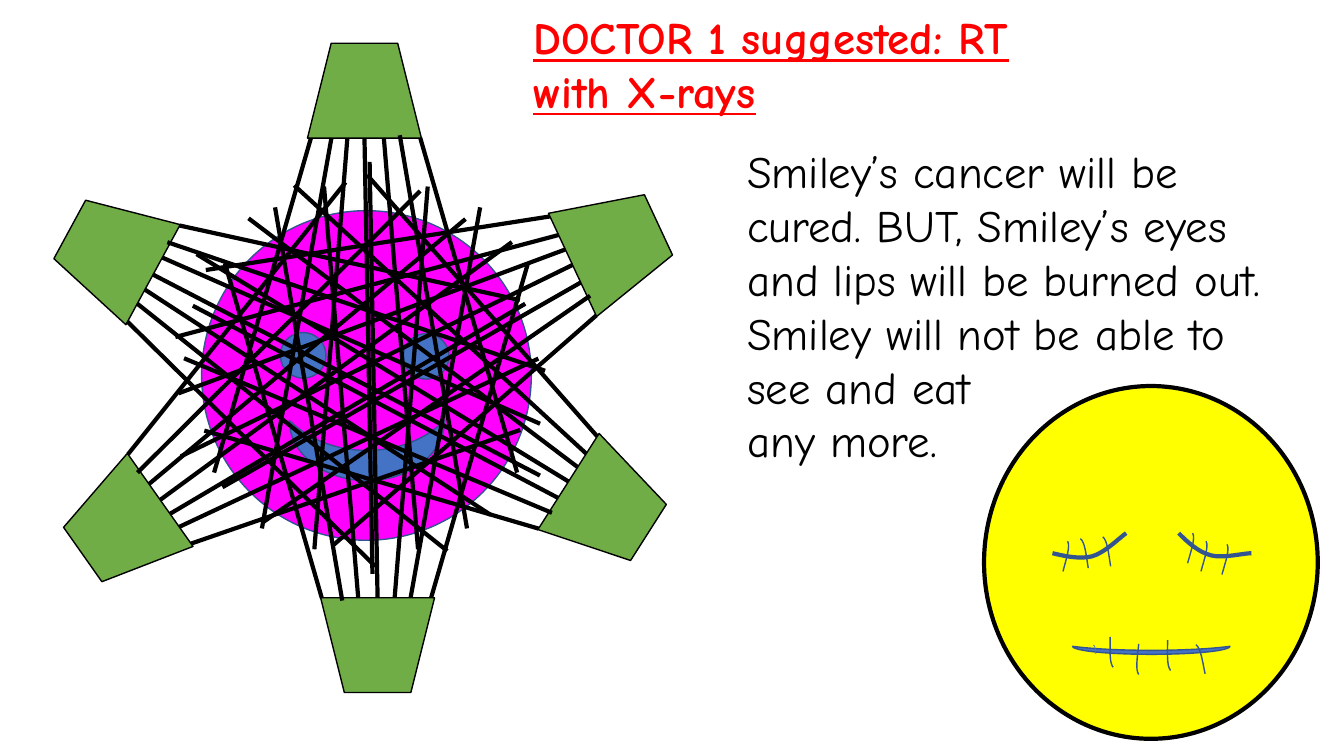
from math import cos, radians, sin
from lxml.etree import SubElement
from pptx import Presentation
from pptx.dml.color import RGBColor
from pptx.enum.shapes import MSO_CONNECTOR, MSO_SHAPE
from pptx.enum.text import MSO_ANCHOR, MSO_AUTO_SIZE, PP_ALIGN
from pptx.oxml.ns import qn
from pptx.util import Inches, Pt

COLORS = {
    "skin": "FF00FF", "blue": "4472C4", "edge": "325491", "green": "70AD47",
    "black": "000000", "yellow": "FFFF00", "red": "FF0000",
}
FONT = "Comic Neue"
SOURCES = [
    (0.54, 2.03, 298.5), (3.05, 0.43, 0), (0.64, 4.76, 234.8),
    (5.47, 4.56, 122.5), (5.54, 1.96, 65), (3.18, 5.93, 180),
]
BEAMS = [
    ((-0.29, 0.5), (-0.9, 4.62)), ((0.31, 0.47), (0.9, 4.62)),
    ((0, 0.5), (0.07, 5.1)), ((0.17, 0.5), (0.47, 4.84)),
    ((-0.15, 0.5), (-0.44, 4.84)), ((-0.47, 0.5), (-1.32, 4.03)),
    ((0.49, 0.5), (1.34, 4.03)),
]
BROWS = [
    [(20.5, 47.4), (24.5, 48.3), (28.7, 49.1), (32.3, 48.3),
     (36, 47.4), (40.5, 43.1), (42.6, 41.7)],
    [(58.3, 41.7), (61.3, 44.6), (64.4, 47.1), (68, 48),
     (71.6, 48.9), (77.6, 47.4), (80.1, 47.4)],
]
STITCH = [(0, 0), (0, 3.7), (-0.3, 7.4), (0.9, 8.6)]
STITCHES = [
    (37.8, 71.1, 0), (55, 72, 0), (64.7, 73.1, 168.2), (45.9, 73.1, 5.7),
    (71.9, 44.9, 195.3), (65.6, 44, 195.3), (61.6, 41.7, 195.3),
    (36.6, 42.6, 170.8), (29.9, 43.1, 170.8), (24.2, 44, 194.4),
]


def color(name):
    return RGBColor.from_string(COLORS[name])


def style(shape, fill, line, width):
    shape.shadow.inherit = False
    if fill:
        shape.fill.solid()
        shape.fill.fore_color.rgb = color(fill)
    else:
        shape.fill.background()
    shape.line.color.rgb = color(line)
    shape.line.width = Pt(width)


def place(box, col, row):
    left, top, width, height = box
    return Inches(left + width * col / 100), Inches(top + height * row / 100)


def draw(shapes, kind, box, cell, fill, line="edge", width=1, turn=0):
    col, row, cols, rows = cell
    size = Inches(box[2] * cols / 100), Inches(box[3] * rows / 100)
    shape = shapes.add_shape(kind, *place(box, col, row), *size)
    shape.rotation = turn
    style(shape, fill, line, width)


def curve(shapes, box, nodes, width, turn=0):
    dots = [place(box, *node) for node in nodes]
    pen = shapes.build_freeform(*dots[0])
    pen.add_line_segments(dots[1:], close=False)
    shape = pen.convert_to_shape()
    lines = list(shape._element.iter(qn("a:lnTo")))
    track = lines[0].getparent()
    for i in range(0, len(lines), 3):
        arc = SubElement(track, qn("a:cubicBezTo"))
        for line in lines[i:i + 3]:
            arc.append(line[0])
            track.remove(line)
    shape.rotation = turn
    style(shape, None, "edge", width)


def patient(slide, box):
    shapes = slide.shapes.add_group_shape().shapes
    draw(shapes, MSO_SHAPE.OVAL, box, (0, 0, 100, 100), "skin")
    draw(shapes, MSO_SHAPE.MOON, box, (41, 49.2, 18.3, 47.1), "blue", turn=270)
    for col, row in ((23.9, 37), (61.2, 37.3)):
        draw(shapes, MSO_SHAPE.OVAL, box, (col, row, 13.8, 13.8), "blue")


def source(slide, box, turn):
    shapes = slide.shapes.add_group_shape().shapes
    draw(shapes, MSO_SHAPE.TRAPEZOID, box, (0, 0, 100, 100), "green", "black", 1, turn)
    left, top, width, height = box
    c, s = cos(radians(turn)), sin(radians(turn))

    def spin(x, y):
        x, y = x * width, y * height
        return (Inches(left + width / 2 + x * c - y * s),
                Inches(top + height / 2 + x * s + y * c))

    for start, end in BEAMS:
        beam = shapes.add_connector(MSO_CONNECTOR.STRAIGHT, *spin(*start), *spin(*end))
        beam.line.color.rgb = color("black")
        beam.line.width = Pt(3)
        SubElement(beam._element.spPr, qn("a:effectLst"))


def burned(slide, box):
    shapes = slide.shapes.add_group_shape().shapes
    draw(shapes, MSO_SHAPE.OVAL, box, (0, 0, 100, 100), "yellow", "black", 3)
    draw(shapes, MSO_SHAPE.MOON, box, (48.9, 52.6, 2.4, 44.6), "blue", turn=270)
    for brow in BROWS:
        curve(shapes, box, brow, 3)
    draw(shapes, MSO_SHAPE.ARC, box, (32, 73.4, 1.5, 5.1), None, "blue", 0.5)
    for col, row, turn in STITCHES:
        curve(shapes, box, [(col + x, row + y) for x, y in STITCH], 1, turn)


def write(holder, box, lines, ink, strong=False):
    holder.left, holder.top, holder.width, holder.height = map(Inches, box)
    frame = holder.text_frame
    frame.word_wrap = True
    frame.auto_size = MSO_AUTO_SIZE.NONE
    frame.vertical_anchor = MSO_ANCHOR.TOP
    for i, line in enumerate(lines):
        para = frame.add_paragraph() if i else frame.paragraphs[0]
        para.alignment = PP_ALIGN.LEFT
        para.space_before = Pt(0)
        props = para._p.get_or_add_pPr()
        props.set("marL", "0")
        props.set("indent", "0")
        SubElement(props, qn("a:buNone"))
        run = para.add_run()
        run.text = line
        font = run.font
        font.name, font.size = FONT, Pt(32)
        font.color.rgb = color(ink)
        if strong:
            font.bold = font.underline = True


def main():
    deck = Presentation()
    deck.slide_width, deck.slide_height = Inches(13.33), Inches(7.5)
    slide = deck.slides.add_slide(deck.slide_layouts[1])
    write(slide.shapes.title, (5.19, 0.05, 5.62, 1.18),
          ["DOCTOR 1 suggested: RT with X-rays"], "red", True)
    write(slide.placeholders[1], (7.31, 1.38, 5.62, 3.33), [
        "Smiley’s cancer will be cured. BUT, Smiley’s eyes and lips will be "
        "burned out. Smiley will not be able to see and eat",
        "any more.",
    ], "black")
    patient(slide, (2, 2.09, 3.27, 3.27))
    for left, top, turn in SOURCES:
        source(slide, (left, top, 1.13, 0.94), turn)
    burned(slide, (9.76, 3.83, 3.31, 3.5))
    deck.save("out.pptx")


if __name__ == "__main__":
    main()
